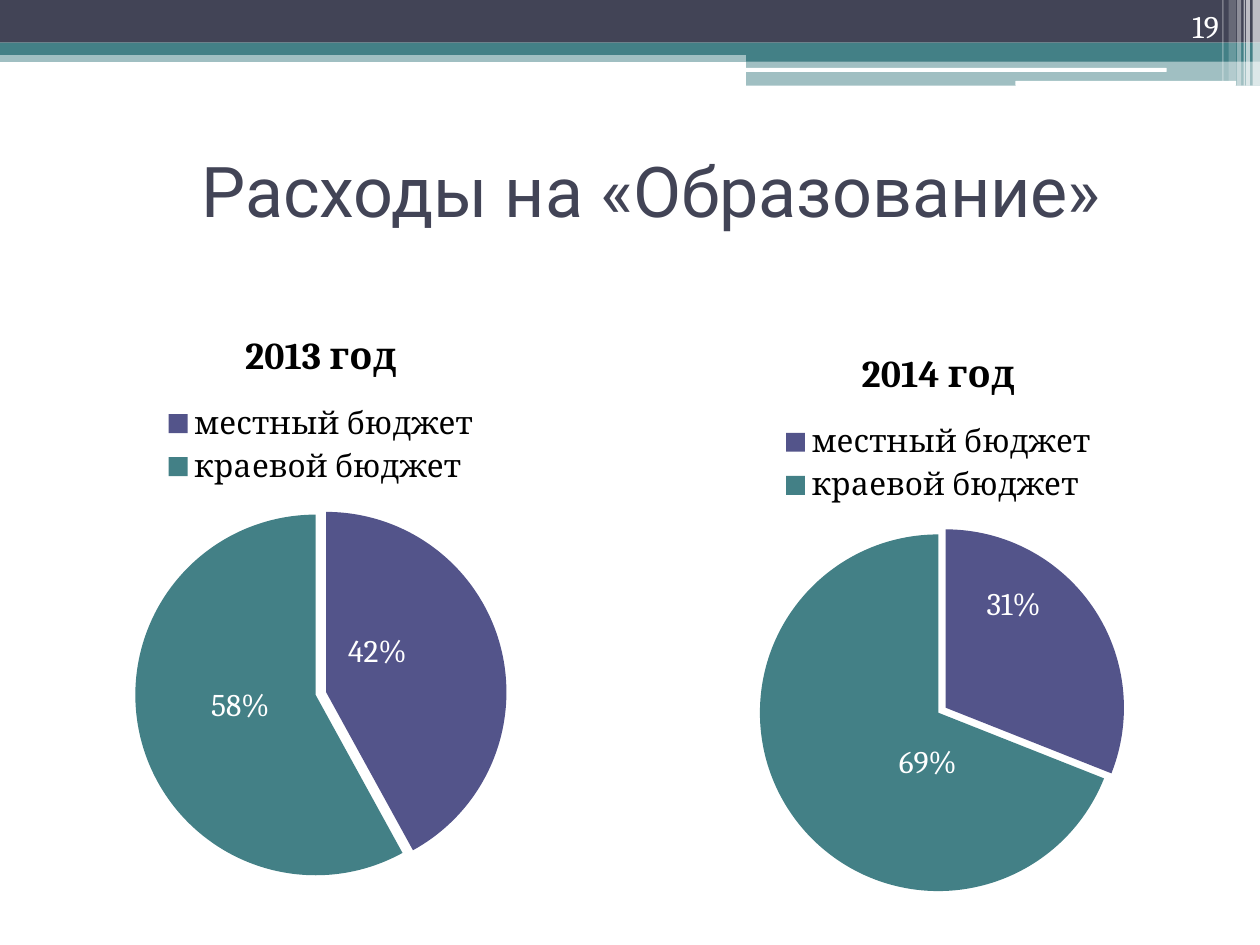
from lxml import etree
from pptx import Presentation
from pptx.chart.data import CategoryChartData
from pptx.dml.color import RGBColor
from pptx.enum.chart import XL_CHART_TYPE, XL_LABEL_POSITION, XL_LEGEND_POSITION
from pptx.enum.shapes import MSO_SHAPE
from pptx.enum.text import MSO_ANCHOR, MSO_AUTO_SIZE, PP_ALIGN
from pptx.oxml import parse_xml
from pptx.oxml.ns import nsdecls, qn
from pptx.util import Cm, Pt

WHITE = RGBColor(0xFF, 0xFF, 0xFF)
BLACK = RGBColor(0x00, 0x00, 0x00)
SLATE = RGBColor(0x42, 0x44, 0x56)
TEAL = RGBColor(0x43, 0x80, 0x86)
VIOLET = RGBColor(0x53, 0x54, 0x8A)

BODY_FONT = "Cambria"
CATEGORIES = ("местный бюджет", "краевой бюджет")

# left, top, width, height in cm, colour, opacity in percent
HEADER_BANDS = (
    (0, 1.02, 25.4, 0.23, TEAL, 50),
    (0, 0, 25.4, 0.86, SLATE, 100),
    (0, 0.86, 25.4, 0.25, TEAL, 100),
    (15.04, 0.99, 10.36, 0.25, TEAL, 100),
    (15.04, 1.22, 10.36, 0.51, TEAL, 50),
)
HEADER_LINES = ((15.01, 1.37, 8.51, 0.08), (20.47, 1.63, 4.45, 0.1))
# left, width, height in cm, opacity in percent
CORNER_STRIPES = (
    (25.25, 0.15, 1.73, 65),
    (25.12, 0.08, 1.73, 65),
    (25.07, 0.03, 1.73, 60),
    (24.94, 0.08, 1.73, 40),
    (24.77, 0.15, 1.63, 20),
    (24.64, 0.03, 1.63, 30),
)


def add_bar(page, left, top, width, height, color, opacity=100, kind=MSO_SHAPE.RECTANGLE):
    bar = page.shapes.add_shape(kind, Cm(left), Cm(top), Cm(width), Cm(height))
    bar.shadow.inherit = False
    bar.line.fill.background()
    bar.fill.solid()
    bar.fill.fore_color.rgb = color
    if opacity < 100:
        color_node = bar.fill._xPr.find(".//" + qn("a:srgbClr"))
        etree.SubElement(color_node, qn("a:alpha")).set("val", str(opacity * 1000))


def add_header(page):
    for band in HEADER_BANDS:
        add_bar(page, *band)
    for line in HEADER_LINES:
        add_bar(page, *line, WHITE, kind=MSO_SHAPE.ROUNDED_RECTANGLE)
    for left, width, height, opacity in CORNER_STRIPES:
        add_bar(page, left, 0, width, height, WHITE, opacity)


def style_text(paragraph, font_name, size, color, alignment):
    paragraph.alignment = alignment
    font = paragraph.font
    font.name, font.size, font.color.rgb = font_name, Pt(size), color


def set_title(page, text):
    title = page.shapes.title
    title.left, title.top, title.width, title.height = Cm(1.7), Cm(2.34), Cm(22.86), Cm(2.97)
    frame = title.text_frame
    frame.text = text
    frame.auto_size = MSO_AUTO_SIZE.NONE
    frame.vertical_anchor = MSO_ANCHOR.MIDDLE
    style_text(frame.paragraphs[0], "Roboto", 40, SLATE, PP_ALIGN.CENTER)


def add_page_number(page, number):
    box = page.shapes.add_textbox(Cm(22.71), Cm(0), Cm(2.11), Cm(1.02))
    frame = box.text_frame
    frame.word_wrap = True
    frame.vertical_anchor = MSO_ANCHOR.BOTTOM
    frame.text = str(number)
    style_text(frame.paragraphs[0], BODY_FONT, 18, WHITE, PP_ALIGN.RIGHT)


def manual_layout(inner=False, **places):
    """Return a c:layout element; places are fractions of the chart size."""
    entries = '<c:layoutTarget val="inner"/>' if inner else ""
    if inner:
        entries += '<c:xMode val="edge"/><c:yMode val="edge"/>'
    entries += "".join(f'<c:{name} val="{value}"/>' for name, value in places.items())
    return parse_xml(
        f"<c:layout {nsdecls('c')}><c:manualLayout>{entries}</c:manualLayout></c:layout>"
    )


def set_plot_area(chart, left, top, width, height):
    plot_area = chart._chartSpace.chart.plotArea
    for layout in plot_area.findall(qn("c:layout")):
        plot_area.remove(layout)
    plot_area.insert(0, manual_layout(True, x=left, y=top, w=width, h=height))


def style_slice(series, index, color, explosion, shift):
    """Colour one slice, pull it out, and move its percent label by shift."""
    point = series.points[index]
    point.format.fill.solid()
    point.format.fill.fore_color.rgb = color
    point_node = series._element.xpath(f"c:dPt[c:idx/@val='{index}']")[0]
    explosion_node = etree.Element(qn("c:explosion"), val=str(explosion))
    point_node.find(qn("c:spPr")).addprevious(explosion_node)

    label = point.data_label
    label.font.size, label.font.name = Pt(18), BODY_FONT
    label.font.color.rgb = WHITE
    label.position = XL_LABEL_POSITION.CENTER
    label_node = series._element.xpath(f"c:dLbls/c:dLbl[c:idx/@val='{index}']")[0]
    label_node.find(qn("c:showVal")).set("val", "0")
    label_node.find(qn("c:showPercent")).set("val", "1")
    label_node.find(qn("c:idx")).addnext(manual_layout(x=shift[0], y=shift[1]))


def add_pie(page, name, values, frame, plot_area, explosions, label_shifts):
    data = CategoryChartData()
    data.categories = CATEGORIES
    data.add_series(name, values)
    chart = page.shapes.add_chart(XL_CHART_TYPE.PIE, *map(Cm, frame), data).chart
    chart.font.size, chart.font.name = Pt(18), BODY_FONT
    chart.font.color.rgb = BLACK

    chart.has_title = True
    chart.chart_title.include_in_layout = False
    chart.chart_title.text_frame.text = name
    title = chart.chart_title.text_frame.paragraphs[0]
    style_text(title, BODY_FONT, 21.6, BLACK, None)
    title.font.bold = True

    chart.has_legend = True
    chart.legend.position = XL_LEGEND_POSITION.TOP
    chart.legend.include_in_layout = False
    set_plot_area(chart, *plot_area)

    series = chart.plots[0].series[0]
    labels = series.data_labels
    labels.show_value, labels.show_percentage = False, True
    labels.font.color.rgb = WHITE
    slices = zip((VIOLET, TEAL), explosions, label_shifts)
    for index, (color, explosion, shift) in enumerate(slices):
        style_slice(series, index, color, explosion, shift)


def main():
    deck = Presentation()
    deck.slide_width, deck.slide_height = Cm(25.4), Cm(19.05)
    page = deck.slides.add_slide(deck.slide_layouts[5])
    add_header(page)
    set_title(page, "Расходы на «Образование»")
    add_pie(page, "2013 год", (42, 58), (0.41, 6.15, 12.12, 11.96),
            (0.2, 0.35, 0.6, 0.61), (3, 3), ((-0.06, -0.03), (0.02, -0.02)))
    add_pie(page, "2014 год", (31, 69), (13.11, 6.53, 11.61, 11.79),
            (0.19, 0.36, 0.62, 0.61), (5, 0), ((-0.01, -0.09), (0.11, 0)))
    add_page_number(page, 19)
    deck.save("out.pptx")


if __name__ == "__main__":
    main()
